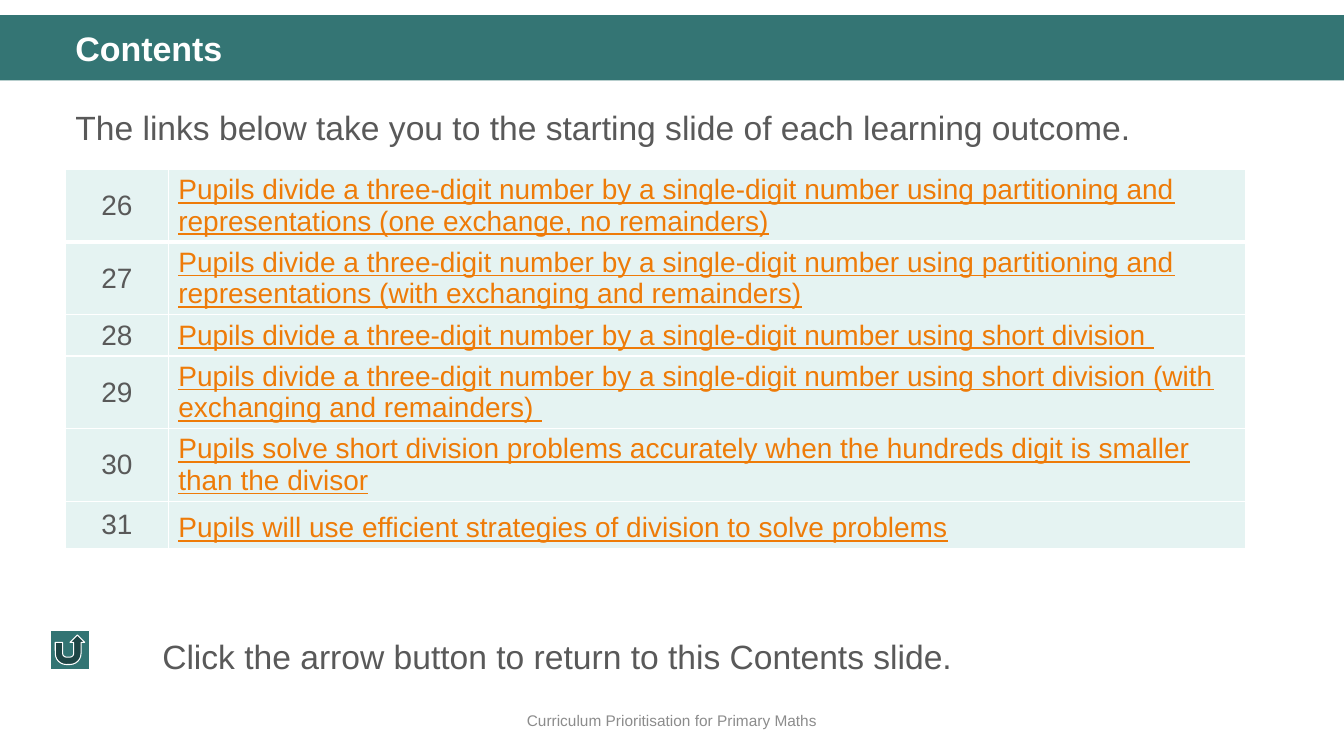
from dataclasses import dataclass

from lxml import etree
from pptx import Presentation
from pptx.dml.color import RGBColor
from pptx.enum.shapes import MSO_SHAPE
from pptx.enum.text import MSO_ANCHOR, PP_ALIGN
from pptx.oxml.ns import qn
from pptx.util import Cm, Pt

LEFT, CENTER = PP_ALIGN.LEFT, PP_ALIGN.CENTER
TOP, MIDDLE = MSO_ANCHOR.TOP, MSO_ANCHOR.MIDDLE
RECT, RETURN_BUTTON = MSO_SHAPE.RECTANGLE, MSO_SHAPE.ACTION_BUTTON_RETURN

FONT = "Arial"
TEAL, BUTTON_TEAL, PALE_TEAL = "347574", "327473", "E5F3F2"
GREY, FOOTER_GREY, ORANGE, WHITE = "595959", "8C8C8C", "EE7B08", "FFFFFF"
ROW_HEIGHT = 1.04


@dataclass
class Box:
    left: float
    top: float
    width: float
    height: float

    def lengths(self) -> list:
        return [Cm(v) for v in (self.left, self.top, self.width, self.height)]


@dataclass
class Style:
    size: float
    color: str = GREY
    bold: bool = False
    underline: bool = False
    align: PP_ALIGN = LEFT
    spacing: float = 1.0
    before: float = 0


@dataclass
class Label:
    text: str
    box: Box
    style: Style
    anchor: MSO_ANCHOR = TOP


@dataclass
class Outcome:
    number: int
    text: str
    spacing: float = 1.0


LABELS = [
    Label("Contents", Box(1.65, 0.69, 30.94, 1.19), Style(24.3, WHITE, bold=True, spacing=0.9)),
    Label("The links below take you to the starting slide of each learning outcome.",
          Box(1.65, 2.36, 30.94, 8.92), Style(24, spacing=1.2, before=10)),
    Label("Click the arrow button to return to this Contents slide.",
          Box(3.84, 15.9, 28.75, 1.27), Style(24)),
    Label("Curriculum Prioritisation for Primary Maths",
          Box(0, 17.65, 33.87, 1.02), Style(11, FOOTER_GREY, align=CENTER), MIDDLE),
]

DIVIDE = "Pupils divide a three-digit number by a single-digit number using "
OUTCOMES = [
    Outcome(26, DIVIDE + "partitioning and representations (one exchange, no remainders)"),
    Outcome(27, DIVIDE + "partitioning and representations (with exchanging and remainders)"),
    Outcome(28, DIVIDE + "short division "),
    Outcome(29, DIVIDE + "short division (with exchanging and remainders) "),
    Outcome(30, "Pupils solve short division problems accurately when the hundreds digit "
                "is smaller than the divisor"),
    Outcome(31, "Pupils will use efficient strategies of division to solve problems", 1.2),
]


def rgb(value: str) -> RGBColor:
    return RGBColor.from_string(value)


def write(tf, text: str, style: Style) -> None:
    tf.text = text
    p = tf.paragraphs[0]
    p.alignment = style.align
    p.line_spacing = style.spacing
    p.space_before = Pt(style.before)
    font = p.runs[0].font
    font.name = FONT
    font.size = Pt(style.size)
    font.bold = style.bold
    font.underline = style.underline
    font.color.rgb = rgb(style.color)


def add_filled(slide, kind: MSO_SHAPE, box: Box, color: str):
    sp = slide.shapes.add_shape(kind, *box.lengths())
    sp.shadow.inherit = False
    sp.fill.solid()
    sp.fill.fore_color.rgb = rgb(color)
    sp.line.fill.background()
    return sp


def add_label(slide, label: Label) -> None:
    tf = slide.shapes.add_textbox(*label.box.lengths()).text_frame
    tf.word_wrap = True
    tf.vertical_anchor = label.anchor
    write(tf, label.text, label.style)


def set_borders(cell, top: float, bottom: float) -> None:
    tc_pr = cell._tc.get_or_add_tcPr()
    widths = {"a:lnL": 1, "a:lnR": 1, "a:lnT": top, "a:lnB": bottom}
    for i, (tag, width) in enumerate(widths.items()):
        ln = etree.Element(qn(tag), w=str(Pt(width)))
        fill = etree.SubElement(ln, qn("a:solidFill"))
        etree.SubElement(fill, qn("a:srgbClr"), val=WHITE)
        tc_pr.insert(i, ln)


def add_outcomes(slide, outcomes: list[Outcome], box: Box, number_width: float) -> None:
    table = slide.shapes.add_table(len(outcomes), 2, *box.lengths()).table
    table.first_row = False
    table.horz_banding = False
    table.columns[0].width = Cm(number_width)
    table.columns[1].width = Cm(box.width - number_width)
    for i, outcome in enumerate(outcomes):
        contents = [
            (str(outcome.number), Style(20, align=CENTER)),
            (outcome.text, Style(20, ORANGE, underline=True, spacing=outcome.spacing)),
        ]
        for j, (text, style) in enumerate(contents):
            cell = table.cell(i, j)
            cell.vertical_anchor = MIDDLE
            cell.fill.solid()
            cell.fill.fore_color.rgb = rgb(PALE_TEAL)
            set_borders(cell, top=3 if i == 1 else 1, bottom=3 if i == 0 else 1)
            write(cell.text_frame, text, style)


def main() -> None:
    prs = Presentation()
    prs.slide_width, prs.slide_height = Cm(33.87), Cm(19.05)
    slide = prs.slides.add_slide(prs.slide_layouts[6])
    add_filled(slide, RECT, Box(0, 0.38, 33.87, 1.65), TEAL)
    add_outcomes(slide, OUTCOMES, Box(1.65, 4.27, 29.75, ROW_HEIGHT * len(OUTCOMES)), 2.59)
    button = add_filled(slide, RETURN_BUTTON, Box(1.27, 15.88, 0.99, 0.99), BUTTON_TEAL)
    button.line.color.rgb = rgb(WHITE)
    button.line.width = Pt(0.75)
    for label in LABELS:
        add_label(slide, label)
    prs.save("out.pptx")


if __name__ == "__main__":
    main()
